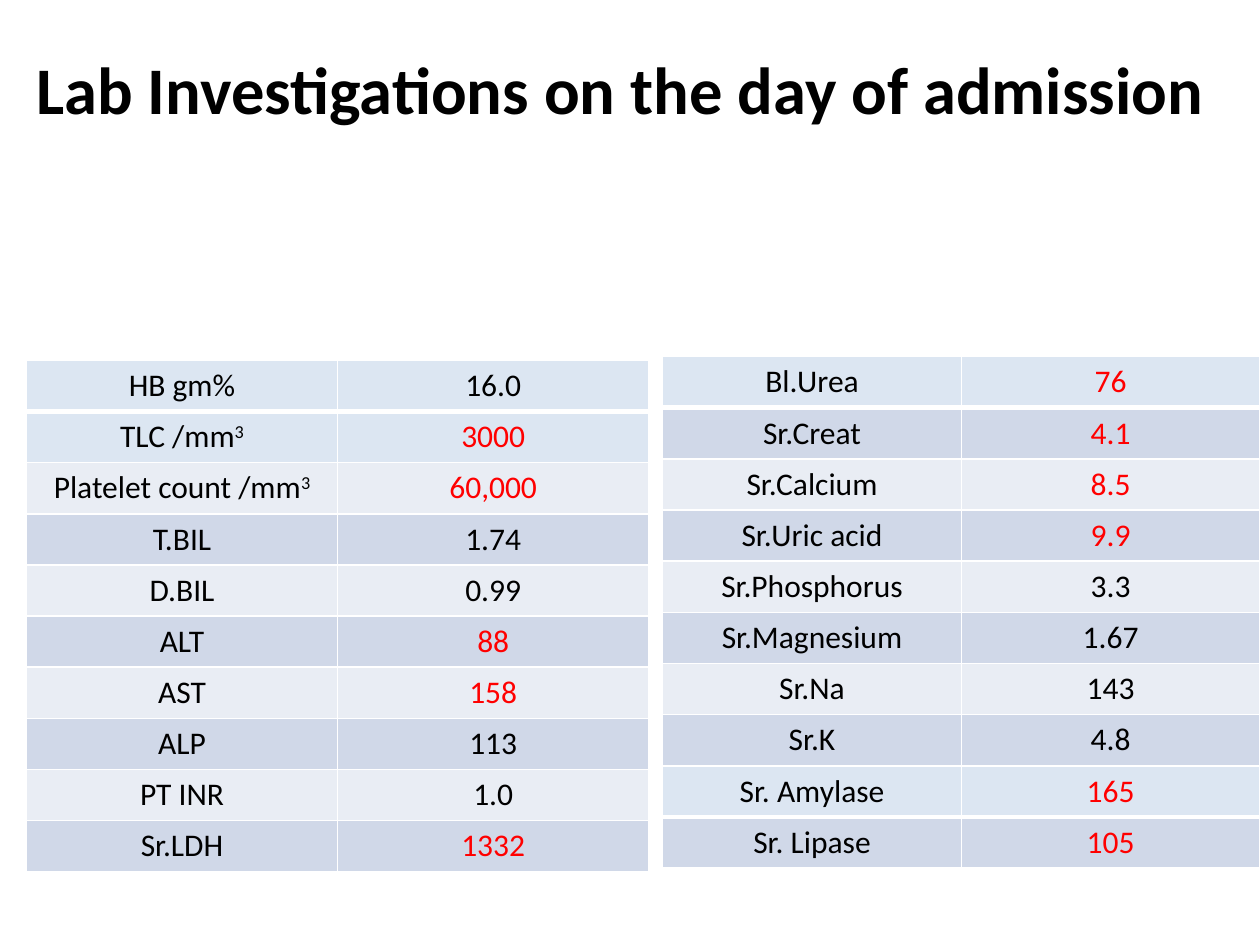
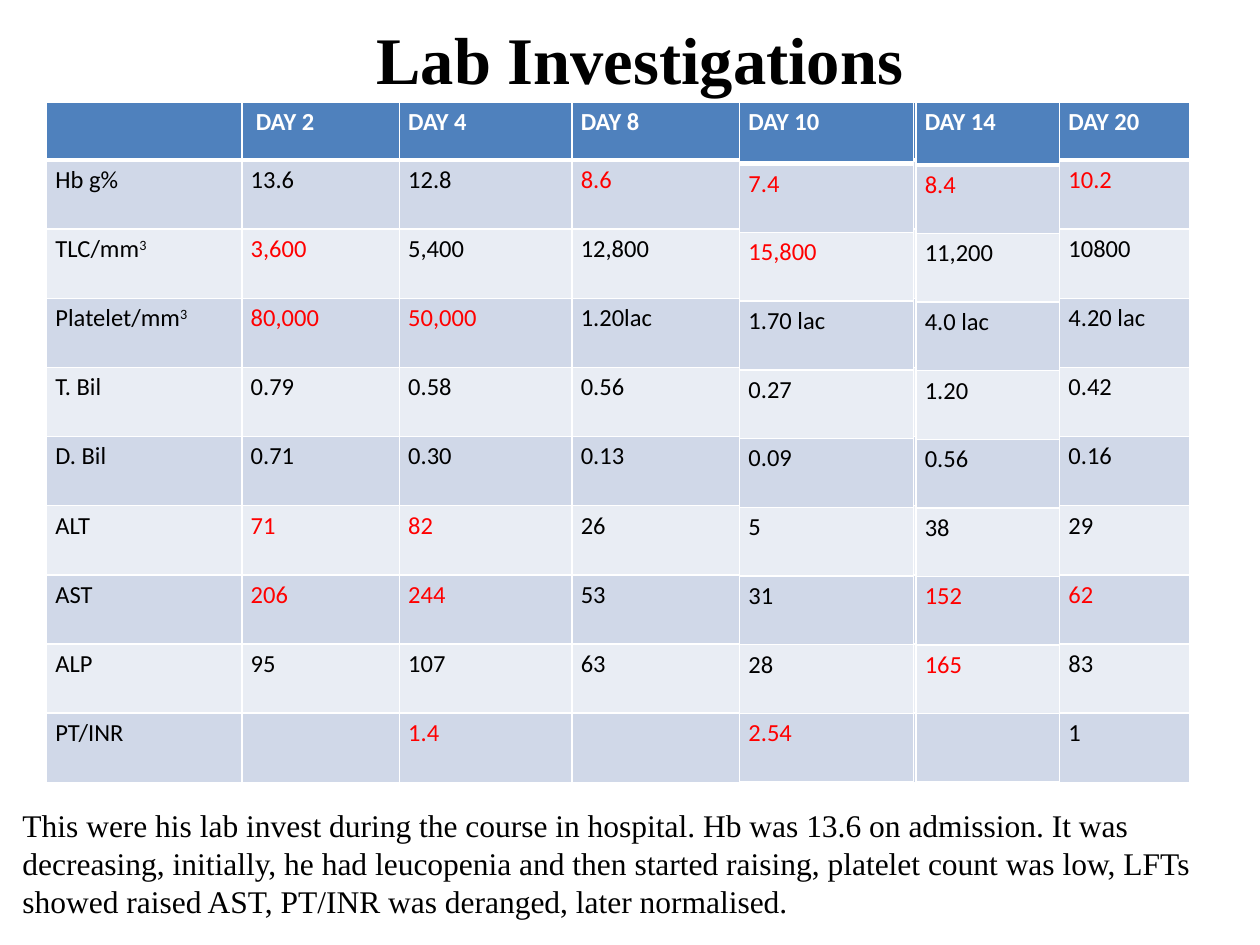
from lxml import etree
from pptx import Presentation
from pptx.dml.color import RGBColor
from pptx.enum.text import MSO_AUTO_SIZE, PP_ALIGN
from pptx.oxml.ns import qn
from pptx.util import Inches, Pt

CENTER, LEFT = PP_ALIGN.CENTER, PP_ALIGN.LEFT
FIT_SHAPE = MSO_AUTO_SIZE.SHAPE_TO_FIT_TEXT
BLANK = 6

COLORS = {
    "text": "000000", "abnormal": "FF0000", "white": "FFFFFF",
    "header": "4F81BD", "pale": "DCE6F2", "odd": "D0D8E8", "even": "E9EDF4",
}
SANS, SERIF = "Calibri", "Times New Roman"
TITLE = {"size": Pt(38), "bold": True}

# Table looks: fill and font of the head rows, body font, alignment, insets
ADMISSION = {
    "head_fill": "pale", "head_color": "text", "head_bold": False,
    "size": 18, "align": CENTER, "insets": {},
}
COURSE = {
    "head_fill": "header", "head_color": "white", "head_bold": True,
    "size": 14, "align": LEFT,
    "insets": {"margin_left": Inches(0.07), "margin_right": Inches(0.07),
               "margin_top": Inches(0.04), "margin_bottom": Inches(0.04)},
}

# In cell text "*" marks an abnormal value and "^" starts a superscript
BLOOD_AND_LIVER = [
    ("HB gm%", "16.0"), ("TLC /mm^3", "*3000"),
    ("Platelet count /mm^3", "*60,000"), ("T.BIL", "1.74"),
    ("D.BIL", "0.99"), ("ALT", "*88"), ("AST", "*158"), ("ALP", "113"),
    ("PT INR", "1.0"), ("Sr.LDH", "*1332"),
]
RENAL_AND_SALTS = [
    ("Bl.Urea", "*76"), ("Sr.Creat", "*4.1"), ("Sr.Calcium", "*8.5"),
    ("Sr.Uric acid", "*9.9"), ("Sr.Phosphorus", "3.3"),
    ("Sr.Magnesium", "1.67"), ("Sr.Na", "143"), ("Sr.K", "4.8"),
]
PANCREAS = [("Sr. Amylase", "*165"), ("Sr. Lipase", "*105")]

EARLY_DAYS = [
    ("", "DAY 2", "DAY 4", "DAY 8"),
    ("Hb g%", "13.6", "12.8", "*8.6"),
    ("TLC/mm^3", "*3,600", "5,400", "12,800"),
    ("Platelet/mm^3", "*80,000", "*50,000", "1.20lac"),
    ("T. Bil", "0.79", "0.58", "0.56"),
    ("D. Bil", "0.71", "0.30", "0.13"),
    ("ALT", "*71", "*82", "26"),
    ("AST", "*206", "*244", "53"),
    ("ALP", "95", "107", "63"),
    ("PT/INR", "", "*1.4", ""),
]
# Left, width, header height and values of each later day
LATER_DAYS = [
    (5.87, 1.38, 0.49, ["DAY 10", "*7.4", "*15,800", "1.70 lac", "0.27",
                        "0.09", "5", "31", "28", "*2.54"]),
    (7.27, 1.57, 0.5, ["DAY 14", "*8.4", "11,200", "4.0 lac", "1.20",
                       "0.56", "38", "*152", "*165", ""]),
    (8.41, 1.03, 0.46, ["DAY 20", "*10.2", "10800", "4.20 lac", "0.42",
                        "0.16", "29", "*62", "83", "1"]),
]
SUMMARY = (
    "This were his lab invest during the course in hospital. Hb was 13.6 on "
    "admission. It was decreasing, initially, he had leucopenia and then "
    "started raising, platelet count was low, LFTs showed raised AST, PT/INR "
    "was deranged, later normalised."
)


def rgb(name):
    return RGBColor.from_string(COLORS[name])


def add_run(p, text, color, **font):
    r = p.add_run()
    r.text = text
    r.font.color.rgb = rgb(color)
    for key, value in font.items():
        setattr(r.font, key, value)
    return r


def add_text(s, left, top, width, height, text, **font):
    tf = s.shapes.add_textbox(Inches(left), Inches(top),
                              Inches(width), Inches(height)).text_frame
    tf.word_wrap = True
    tf.auto_size = FIT_SHAPE
    add_run(tf.paragraphs[0], text, "text", **font)


def set_borders(cell, **widths):
    """Draw white borders; widths are points by side tag."""
    tcPr = cell._tc.get_or_add_tcPr()
    for i, side in enumerate(("lnL", "lnR", "lnT", "lnB")):
        ln = etree.Element(qn("a:" + side), w=str(Pt(widths.get(side, 1))))
        fill = etree.SubElement(ln, qn("a:solidFill"))
        etree.SubElement(fill, qn("a:srgbClr"), val=COLORS["white"])
        tcPr.insert(i, ln)


def fill_cell(cell, text, look, head):
    for key, value in look["insets"].items():
        setattr(cell, key, value)
    p = cell.text_frame.paragraphs[0]
    p.alignment = look["align"]
    if not text:
        return
    color = look["head_color"] if head else "text"
    if text.startswith("*"):
        color = "abnormal"
    font = {"name": SANS, "size": Pt(look["size"]),
            "bold": head and look["head_bold"]}
    base, _, raised = text.lstrip("*").partition("^")
    add_run(p, base, color, **font)
    if raised:
        r = add_run(p, raised, color, **font)
        r.font._element.set("baseline", "30000")


def add_lab_table(s, left, top, widths, height, rows, look,
                  head_height=None, head_rows=1):
    """Head rows first, then bands; the first row ends in a thick rule."""
    table = s.shapes.add_table(len(rows), len(widths), Inches(left),
                               Inches(top), Inches(sum(widths)),
                               Inches(height)).table
    for column, width in zip(table.columns, widths):
        column.width = Inches(width)
    head_height = head_height or height / len(rows)
    body_height = (height - head_height) / (len(rows) - 1)
    for i, values in enumerate(rows):
        table.rows[i].height = Inches(body_height if i else head_height)
        head = i < head_rows
        band = look["head_fill"] if head else ("even", "odd")[i % 2]
        for cell, text in zip(table.rows[i].cells, values):
            cell.fill.solid()
            cell.fill.fore_color.rgb = rgb(band)
            set_borders(cell, lnT=3 if i == 1 else 1, lnB=1 if i else 3)
            fill_cell(cell, text, look, head)
    return table


def build_admission(prs):
    s = prs.slides.add_slide(prs.slide_layouts[BLANK])
    right, half = 5.26, [2.37] * 2
    add_lab_table(s, right, 2.83, half, 3.25, RENAL_AND_SALTS, ADMISSION)
    add_lab_table(s, 0.21, 2.86, [2.47] * 2, 4.06, BLOOD_AND_LIVER,
                  ADMISSION, head_rows=2)
    add_text(s, 0.19, 0.33, 9.94, 0.74,
             "Lab Investigations on the day of admission", name=SANS, **TITLE)
    add_lab_table(s, right, 6.08, half, 0.81, PANCREAS, ADMISSION)


def build_course(prs):
    s = prs.slides.add_slide(prs.slide_layouts[BLANK])
    top, height = 0.81, 5.4
    table = add_lab_table(s, 0.37, top, [1.55, 1.25, 1.37, 3.17], height,
                          EARLY_DAYS, COURSE, 0.46)
    table.cell(0, 1).margin_left = Inches(0.11)
    add_text(s, 2.89, 0.09, 4.67, 0.74, "Lab Investigations",
             name=SERIF, **TITLE)
    add_text(s, 0.08, 6.35, 9.92, 1.01, SUMMARY, name=SERIF, size=Pt(18))
    # Each later day is a column of its own over the main table
    for left, width, head_height, values in LATER_DAYS:
        add_lab_table(s, left, top, [width], height,
                      [(value,) for value in values], COURSE, head_height)


def main():
    prs = Presentation()
    prs.slide_width, prs.slide_height = Inches(10), Inches(7.5)
    build_admission(prs)
    build_course(prs)
    prs.save("out.pptx")


if __name__ == "__main__":
    main()
